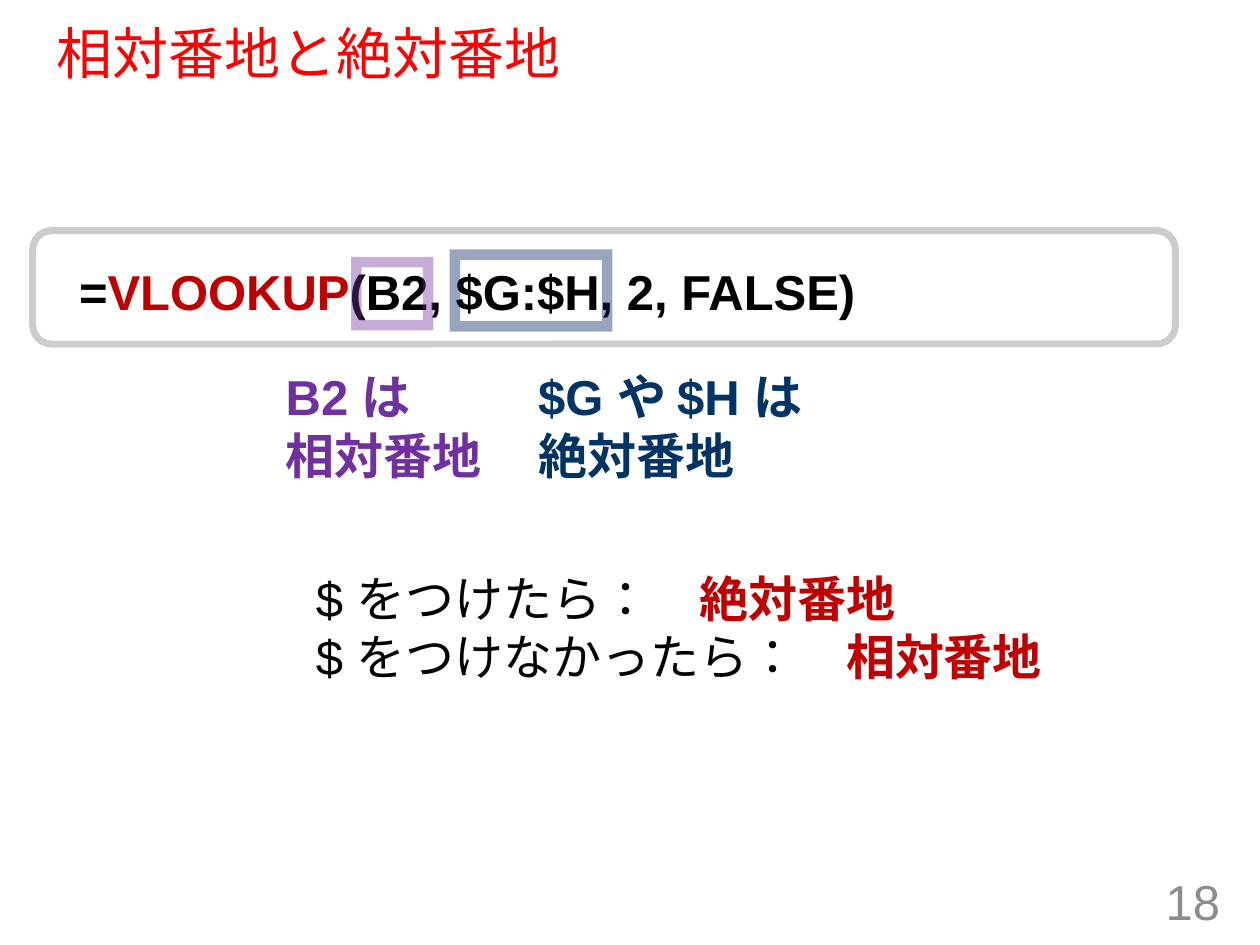
from dataclasses import dataclass

from lxml.etree import SubElement
from pptx import Presentation
from pptx.dml.color import RGBColor
from pptx.enum.lang import MSO_LANGUAGE_ID
from pptx.enum.shapes import MSO_SHAPE
from pptx.enum.text import MSO_ANCHOR, PP_ALIGN
from pptx.oxml.ns import qn
from pptx.util import Pt


@dataclass(frozen=True)
class Theme:
    font: str = "Arial"
    title_size: int = 32
    body_size: int = 28
    black: str = "000000"
    title: str = "FF0000"
    accent: str = "C00000"
    relative: str = "7030A0"
    absolute: str = "003366"
    absolute_frame: str = "002060"
    number: str = "8C8C8C"


THEME = Theme()


def add_text(s, box, paragraphs, size=THEME.body_size, align=PP_ALIGN.LEFT,
             anchor=MSO_ANCHOR.TOP, spacing=None):
    sp = s.shapes.add_textbox(*map(Pt, box))
    tf = sp.text_frame
    tf.word_wrap = True
    tf.vertical_anchor = anchor
    for i, runs in enumerate(paragraphs):
        p = tf.add_paragraph() if i else tf.paragraphs[0]
        p.alignment = align
        p.line_spacing = spacing
        for text, color, bold in runs:
            r = p.add_run()
            r.text = text
            r.font.name = THEME.font
            r.font.size = Pt(size)
            r.font.bold = bold
            r.font.language_id = MSO_LANGUAGE_ID.JAPANESE
            r.font.color.rgb = RGBColor.from_string(color)


def add_frame(s, kind, box, color, weight, opacity):
    sp = s.shapes.add_shape(kind, *map(Pt, box))
    sp.shadow.inherit = False
    sp.fill.background()
    sp.line.width = Pt(weight)
    sp.line.color.rgb = RGBColor.from_string(color)
    ln = sp.line._ln
    clr = ln.find(".//" + qn("a:srgbClr"))
    SubElement(clr, qn("a:alpha")).set("val", str(opacity * 1000))
    SubElement(ln, qn("a:miter")).set("lim", "800000")


def add_title(s, box):
    add_text(s, box, [[("相対番地と絶対番地", THEME.title, False)]],
             size=THEME.title_size, anchor=MSO_ANCHOR.MIDDLE, spacing=0.9)


def add_page_number(s, box):
    add_text(s, box, [[("18", THEME.number, False)]],
             align=PP_ALIGN.RIGHT, anchor=MSO_ANCHOR.MIDDLE)


def add_formula(s, box):
    x, y, w, h = box
    add_text(s, (x + 19.4, y + 14, 475, 41), [[
        ("=", THEME.black, True),
        ("VLOOKUP", THEME.accent, True),
        ("(B2, $G:$H, 2, FALSE)", THEME.black, True),
    ]])
    add_frame(s, MSO_SHAPE.ROUNDED_RECTANGLE, box, THEME.black, 4, 20)
    add_frame(s, MSO_SHAPE.RECTANGLE, (x + 185, y + 18, 41, 36),
              THEME.relative, 6, 40)
    add_frame(s, MSO_SHAPE.RECTANGLE, (x + 241.2, y + 13.8, 87, 41),
              THEME.absolute_frame, 6, 40)


def add_labels(s, box):
    x, y, w, h = box
    split = 144.3
    labels = [
        (0, split, "B2 は", "相対番地", THEME.relative),
        (split, w - split, "$G や $H は", "絶対番地", THEME.absolute),
    ]
    for dx, width, cell, kind, color in labels:
        add_text(s, (x + dx, y, width, h),
                 [[(cell, color, True)], [(kind, color, True)]])


def add_rules(s, box):
    rules = [("$ をつけたら：　", "絶対番地"), ("$ をつけなかったら：　", "相対番地")]
    add_text(s, box, [[(case, THEME.black, False), (kind, THEME.accent, True)]
                      for case, kind in rules])


def main():
    prs = Presentation()
    prs.slide_width, prs.slide_height = Pt(720), Pt(540)
    s = prs.slides.add_slide(prs.slide_layouts[6])
    add_title(s, (25.2, 13.7, 666, 36.7))
    add_page_number(s, (542.2, 500.4, 162, 28.8))
    add_formula(s, (18.7, 131.8, 653, 64.8))
    add_labels(s, (156.2, 205.9, 344.3, 74.9))
    add_rules(s, (173.5, 321.1, 460, 74.9))
    prs.save("out.pptx")


if __name__ == "__main__":
    main()
